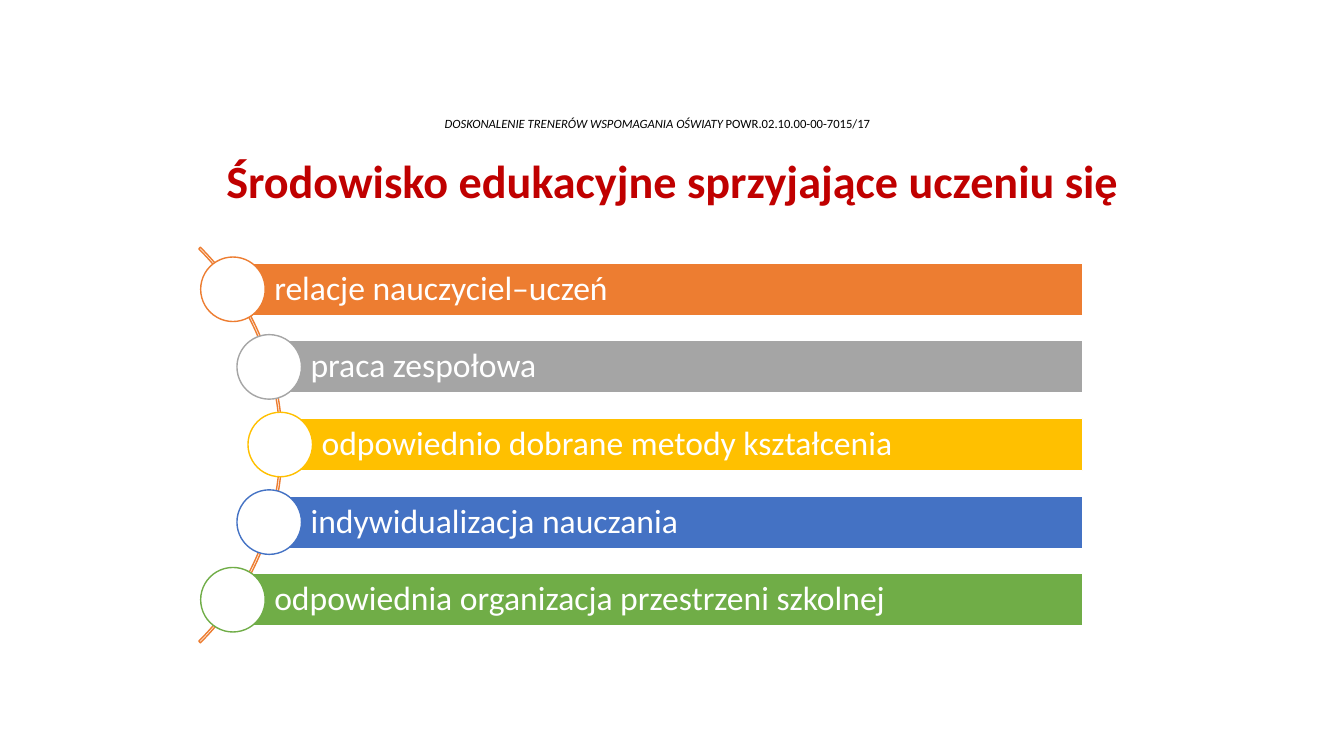
from math import sqrt

from pptx import Presentation
from pptx.dml.color import RGBColor
from pptx.enum.shapes import MSO_SHAPE
from pptx.enum.text import MSO_ANCHOR, MSO_AUTO_SIZE, PP_ALIGN
from pptx.util import Inches, Pt

COLORS = {
    "black": "000000",
    "white": "FFFFFF",
    "red": "C00000",
    "orange": "ED7D31",
    "gray": "A5A5A5",
    "yellow": "FFC000",
    "blue": "4472C4",
    "green": "70AD47",
}

FACTORS = [
    ("relacje nauczyciel–uczeń", "orange"),
    ("praca zespołowa", "gray"),
    ("odpowiednio dobrane metody kształcenia", "yellow"),
    ("indywidualizacja nauczania", "blue"),
    ("odpowiednia organizacja przestrzeni szkolnej", "green"),
]

ARC_X, ARC_Y, ARC_RADIUS = 0.02, 4.41, 2.76
ROW_PITCH, BAR_HEIGHT, BAR_RIGHT, CIRCLE = 0.77, 0.52, 10.74, 0.64


class SlideBuilder:
    font = "Calibri"

    def __init__(self, prs):
        self.s = prs.slides.add_slide(prs.slide_layouts[5])

    def add_runs(self, tf, runs, size, color, align, bold=False):
        tf.word_wrap = True
        tf.auto_size = MSO_AUTO_SIZE.NONE
        p = tf.paragraphs[0]
        p.alignment = align
        p.line_spacing = 0.9
        for text, italic in runs:
            r = p.add_run()
            r.text = text
            r.font.name = self.font
            r.font.size = Pt(size)
            r.font.bold = bold
            r.font.italic = italic
            r.font.color.rgb = RGBColor.from_string(COLORS[color])

    def title(self, text, x, y, w, h):
        sp = self.s.shapes.title
        sp.left, sp.top, sp.width, sp.height = map(Inches, (x, y, w, h))
        sp.text_frame.vertical_anchor = MSO_ANCHOR.MIDDLE
        self.add_runs(sp.text_frame, [(text, False)], 33, "red", PP_ALIGN.CENTER, True)

    def header(self, runs, x, y, w, h):
        sp = self.s.shapes.add_textbox(*map(Inches, (x, y, w, h)))
        tf = sp.text_frame
        tf.margin_top = Inches(0.71)
        self.add_runs(tf, runs, 9, "black", PP_ALIGN.CENTER)

    def shape(self, kind, x, y, w, h, fill, line):
        sp = self.s.shapes.add_shape(kind, *map(Inches, (x, y, w, h)))
        sp.shadow.inherit = False
        if fill:
            sp.fill.solid()
            sp.fill.fore_color.rgb = RGBColor.from_string(COLORS[fill])
        else:
            sp.fill.background()
        sp.line.color.rgb = RGBColor.from_string(COLORS[line])
        sp.line.width = Pt(1)
        return sp

    def arc(self, x, y, size, line):
        sp = self.shape(MSO_SHAPE.BLOCK_ARC, x, y, size, size, None, line)
        for i, value in enumerate((189, 27, 0.004)):
            sp.adjustments[i] = value

    def bar(self, text, x, y, w, h, color):
        sp = self.shape(MSO_SHAPE.RECTANGLE, x, y, w, h, color, "white")
        tf = sp.text_frame
        tf.margin_left = Inches(0.41)
        tf.margin_top = tf.margin_right = tf.margin_bottom = Inches(0.07)
        tf.vertical_anchor = MSO_ANCHOR.MIDDLE
        self.add_runs(tf, [(text, False)], 24, "white", PP_ALIGN.LEFT)

    def circle(self, cx, cy, size, color):
        self.shape(MSO_SHAPE.OVAL, cx - size / 2, cy - size / 2, size, size, "white", color)


def main():
    prs = Presentation()
    prs.slide_width, prs.slide_height = Inches(13.33), Inches(7.5)
    slide = SlideBuilder(prs)
    slide.header(
        [("DOSKONALENIE TRENERÓW WSPOMAGANIA OŚWIATY ", True), ("POWR.02.10.00-00-7015/17", False)],
        0.79, 0.46, 11.46, 1.22,
    )
    slide.title("Środowisko edukacyjne sprzyjające uczeniu się", 0.92, 1.46, 11.5, 0.73)
    slide.arc(-2.75, 1.64, 5.55, "orange")
    for i, (text, color) in enumerate(FACTORS):
        dy = (i - 2) * ROW_PITCH
        x = ARC_X + sqrt(ARC_RADIUS ** 2 - dy ** 2)
        y = ARC_Y + dy
        slide.bar(text, x, y - BAR_HEIGHT / 2, BAR_RIGHT - x, BAR_HEIGHT, color)
        slide.circle(x, y, CIRCLE, color)
    prs.save("out.pptx")


if __name__ == "__main__":
    main()
